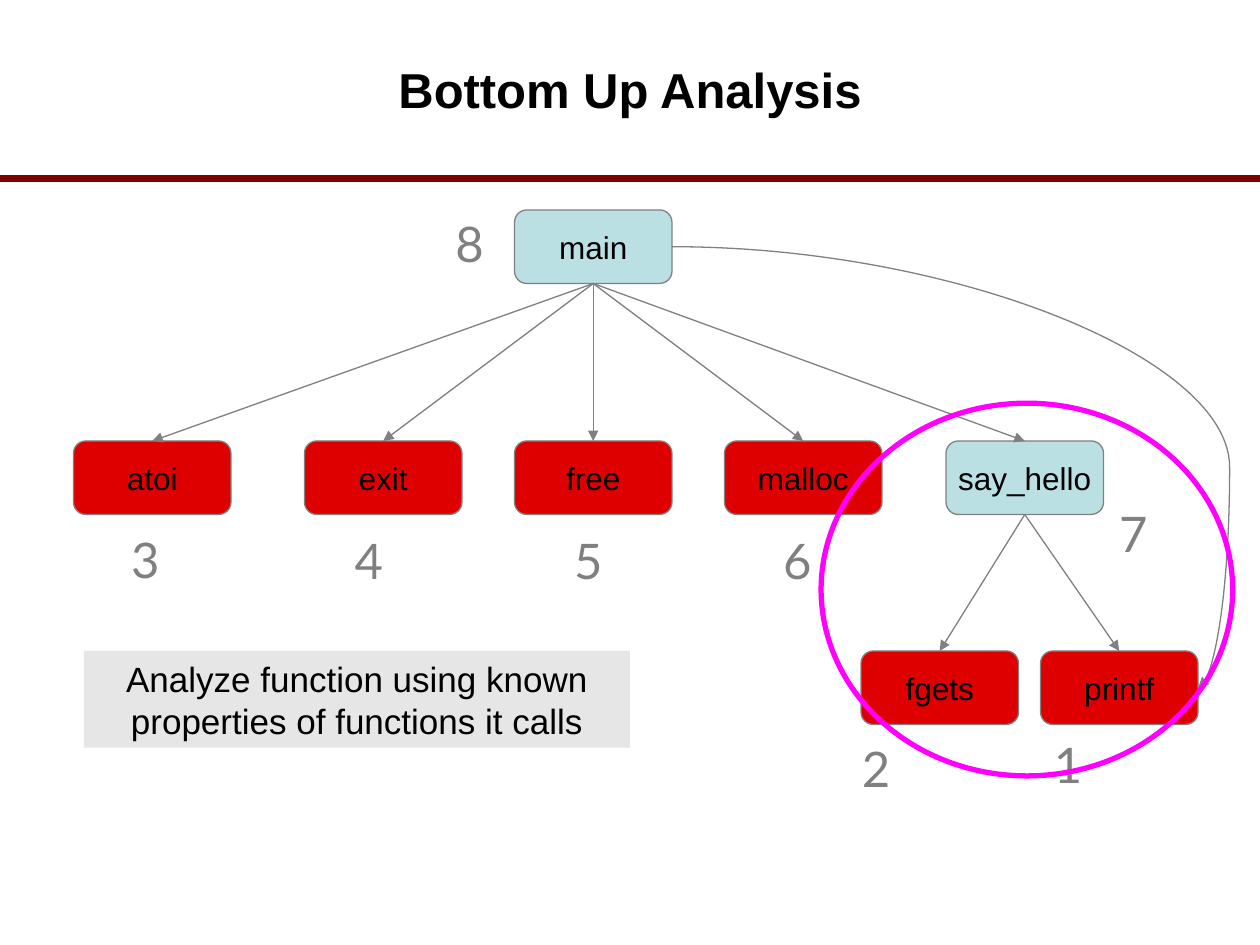
from lxml.etree import SubElement as Sub
from pptx import Presentation
from pptx.dml.color import RGBColor
from pptx.enum.shapes import MSO_CONNECTOR as Link, MSO_SHAPE as Form
from pptx.enum.text import MSO_ANCHOR as Anchor, PP_ALIGN as Align
from pptx.oxml.ns import qn
from pptx.util import Inches, Pt

COLS, ROWS = 120, 90
WIDE, HIGH = Inches(10), Inches(7.5)
RED, BLUE, GRAY, BLACK = "DE0000", "BBE0E3", "808080", "000000"
SIZE = (15, 7)
NODES = {
    "atoi": (7, 42, RED), "main": (49, 20, BLUE), "exit": (29, 42, RED),
    "free": (49, 42, RED), "malloc": (69, 42, RED), "printf": (99.1, 62, RED),
    "fgets": (82, 62, RED), "say_hello": (90.1, 42, BLUE),
}
CALLS = {
    "main": ("atoi", "exit", "free", "malloc", "say_hello"),
    "say_hello": ("fgets", "printf"),
}
RANKS = [(99.2, 69.4), (80.9, 69.7), (11.3, 49.8), (32.6, 49.9),
         (53.5, 49.9), (73.4, 49.9), (105.4, 47.4), (42.2, 19.7)]


def color(code):
    """Turn a hex string into a colour."""
    return RGBColor.from_string(code)


def place(col, row, wide, high):
    """Turn grid columns and rows into slide lengths."""
    x, y = WIDE / COLS, HIGH / ROWS
    return [round(n) for n in (col * x, row * y, wide * x, high * y)]


def write(shape, text, size, ink=BLACK, face="Arial", bold=False,
          align=Align.CENTER, wrap=True, anchor=Anchor.MIDDLE):
    """Put formatted text into a shape."""
    frame = shape.text_frame
    for key, value in {"word_wrap": wrap, "vertical_anchor": anchor}.items():
        setattr(frame, key, value)
    para = frame.paragraphs[0]
    para.alignment = align
    run = para.add_run()
    run.text = text
    for key, value in {"name": face, "size": Pt(size), "bold": bold}.items():
        setattr(run.font, key, value)
    run.font.color.rgb = color(ink)


def draw(slide, form, box, fill=None, line=None, width=0.75):
    """Add a preset shape with the given fill and outline."""
    shape = slide.shapes.add_shape(form, *place(*box))
    shape.shadow.inherit = False
    for part, code in ((shape.fill, fill), (shape.line.fill, line)):
        if code:
            part.solid()
            part.fore_color.rgb = color(code)
        else:
            part.background()
    if line:
        shape.line.width = Pt(width)
    return shape


def stroke(slide, kind, ends, code, width):
    """Add a plain connector without a shadow."""
    wire = slide.shapes.add_connector(kind, *ends)
    wire.line.color.rgb = color(code)
    wire.line.width = Pt(width)
    Sub(wire._element.spPr, qn("a:effectLst"))
    return wire


def join(slide, start, end, sides=(2, 0), kind=Link.STRAIGHT):
    """Join two nodes with an arrow."""
    wire = stroke(slide, kind, (0, 0, 0, 0), GRAY, 0.75)
    wire.begin_connect(start, sides[0])
    wire.end_connect(end, sides[1])
    Sub(wire.line._get_or_add_ln(), qn("a:tailEnd"), type="triangle")
    return wire


def header(slide, box):
    """Draw the rule and the title above it."""
    left, top, wide, high = place(*box)
    stroke(slide, Link.STRAIGHT, (left, top + high, left + wide, top + high),
           "800000", 4)
    title = slide.shapes.add_textbox(*place(9, 1, 102, 15))
    write(title, "Bottom Up Analysis", 28, bold=True)


def graph(slide):
    """Draw the call graph with its nodes and arrows."""
    nodes = {}
    for name, (col, row, fill) in NODES.items():
        nodes[name] = draw(slide, Form.ROUNDED_RECTANGLE,
                           (col, row, *SIZE), fill, GRAY)
        write(nodes[name], name, 18, wrap=False)
    for source, goals in CALLS.items():
        for goal in goals:
            join(slide, nodes[source], nodes[goal])
    curve = join(slide, nodes["main"], nodes["printf"], (3, 3), Link.CURVE)
    guides = curve._element.spPr.find(qn("a:prstGeom")).get_or_add_avLst()
    Sub(guides, qn("a:gd"), name="adj1", fmla="val 106000")


def ranks(slide):
    """Number the functions in order of analysis."""
    for rank, (col, row) in enumerate(RANKS, 1):
        label = slide.shapes.add_textbox(*place(col, row, 4.8, 6.8))
        write(label, str(rank), 28, GRAY, "Lato", align=Align.LEFT,
              wrap=False, anchor=Anchor.TOP)


def note(slide, box):
    """Draw the shaded remark."""
    write(draw(slide, Form.RECTANGLE, box, "E6E6E6"),
          "Analyze function using known properties of functions it calls",
          20, anchor=Anchor.TOP)


def main():
    """Build and save the slide."""
    deck = Presentation()
    deck.slide_width, deck.slide_height = WIDE, HIGH
    slide = deck.slides.add_slide(deck.slide_layouts[6])
    header(slide, (0, 0, COLS, 17))
    graph(slide)
    ranks(slide)
    draw(slide, Form.OVAL, (78.2, 38.4, 39.2, 35.5), line="FF00FF", width=3)
    note(slide, (8, 62, 52, 9.2))
    deck.save("out.pptx")


if __name__ == "__main__":
    main()
